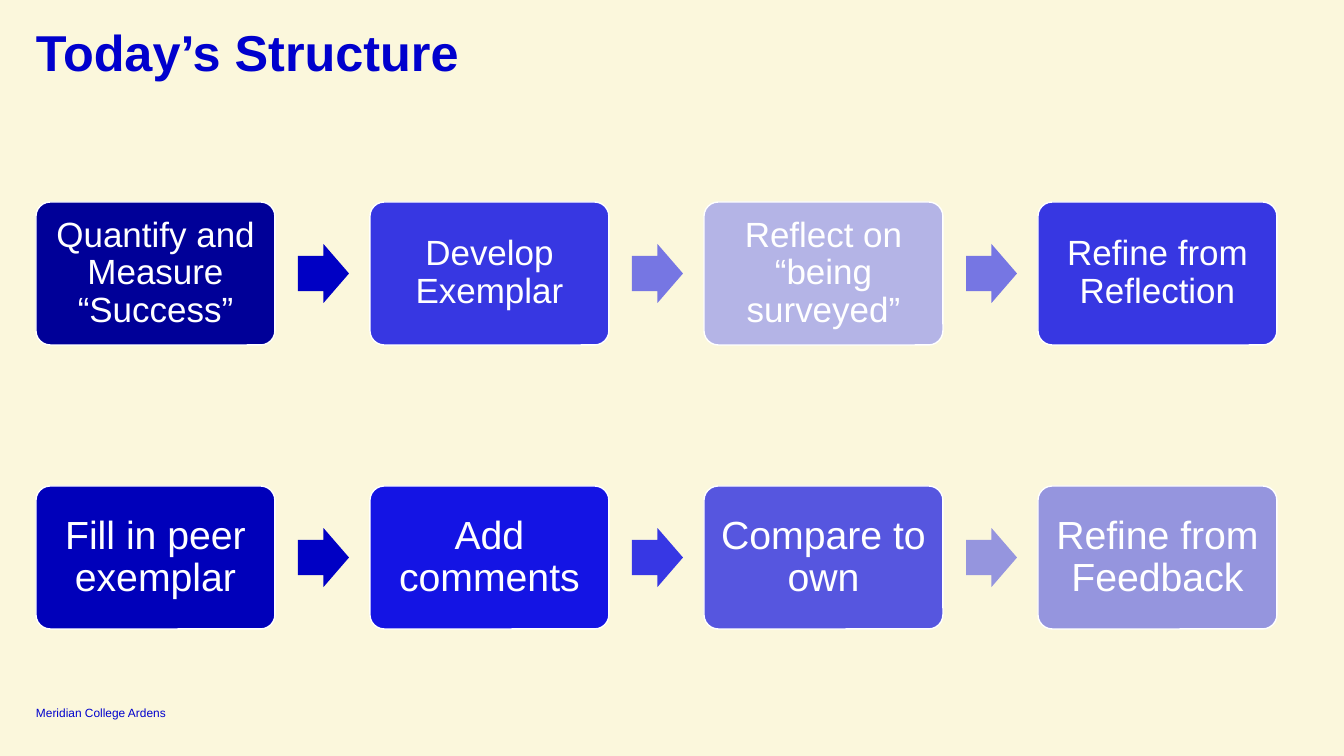
from dataclasses import dataclass

from pptx import Presentation
from pptx.dml.color import RGBColor
from pptx.enum.shapes import MSO_SHAPE
from pptx.enum.text import MSO_ANCHOR, MSO_AUTO_SIZE, PP_ALIGN
from pptx.shapes.autoshape import Shape
from pptx.shapes.group import GroupShape
from pptx.slide import Slide
from pptx.util import Emu, Pt

SLIDE_W, SLIDE_H = 1344, 756
EMU_PER_PX = 12192000 / SLIDE_W

LEFT, PITCH = 36, 334
BOX_W, BOX_H = 239, 143
ARROW_DX, ARROW_W, ARROW_H = 262, 51, 59

CREAM = RGBColor(0xFB, 0xF7, 0xDC)
WHITE = RGBColor(0xFF, 0xFF, 0xFF)
BLUE = RGBColor(0x00, 0x00, 0xCD)
NAVY = RGBColor(0x00, 0x00, 0x98)
DARK_BLUE = RGBColor(0x00, 0x00, 0xBA)
ARROW_BLUE = RGBColor(0x00, 0x00, 0xC4)
VIVID_BLUE = RGBColor(0x14, 0x14, 0xE4)
MID_BLUE = RGBColor(0x37, 0x37, 0xE2)
MID_ARROW_BLUE = RGBColor(0x37, 0x37, 0xE4)
SOFT_BLUE = RGBColor(0x56, 0x56, 0xDF)
LIGHT_BLUE = RGBColor(0x76, 0x76, 0xE3)
LAVENDER = RGBColor(0x95, 0x95, 0xDE)
PALE_LAVENDER = RGBColor(0xB4, 0xB4, 0xE6)


@dataclass(frozen=True)
class Step:
    text: str
    fill: RGBColor
    arrow: RGBColor | None = None


@dataclass(frozen=True)
class Process:
    top: int
    size: int
    margin: int
    steps: tuple[Step, ...]


PROCESSES = (
    Process(202, 25, 10, (
        Step("Quantify and Measure “Success”", NAVY, ARROW_BLUE),
        Step("Develop Exemplar", MID_BLUE, LIGHT_BLUE),
        Step("Reflect on “being surveyed”", PALE_LAVENDER, LIGHT_BLUE),
        Step("Refine from Reflection", MID_BLUE),
    )),
    Process(486, 28, 12, (
        Step("Fill in peer exemplar", DARK_BLUE, ARROW_BLUE),
        Step("Add comments", VIVID_BLUE, MID_ARROW_BLUE),
        Step("Compare to own", SOFT_BLUE, LAVENDER),
        Step("Refine from Feedback", LAVENDER),
    )),
)


def px(n: float) -> Emu:
    return Emu(round(n * EMU_PER_PX))


def write(shape: Shape, text: str, *, size: float, color: RGBColor,
          bold: bool = False, align: PP_ALIGN = PP_ALIGN.LEFT,
          anchor: MSO_ANCHOR = MSO_ANCHOR.TOP, margin: int = 0,
          spacing: float = 0.9) -> None:
    tf = shape.text_frame
    tf.auto_size = MSO_AUTO_SIZE.NONE
    tf.word_wrap = True
    tf.vertical_anchor = anchor
    tf.margin_left = tf.margin_right = px(margin)
    tf.margin_top = tf.margin_bottom = px(margin)
    p = tf.paragraphs[0]
    p.alignment = align
    p.line_spacing = spacing
    r = p.add_run()
    r.text = text
    r.font.name = "Arial"
    r.font.size = Pt(size)
    r.font.bold = bold
    r.font.color.rgb = color


def add_filled(group: GroupShape, kind: MSO_SHAPE, x: int, y: int, w: int,
               h: int, fill: RGBColor, adjustments: tuple[float, ...]) -> Shape:
    sp = group.shapes.add_shape(kind, px(x), px(y), px(w), px(h))
    sp.shadow.inherit = False
    sp.fill.solid()
    sp.fill.fore_color.rgb = fill
    sp.line.fill.background()
    for i, value in enumerate(adjustments):
        sp.adjustments[i] = value
    return sp


def add_process(s: Slide, process: Process) -> None:
    group = s.shapes.add_group_shape()
    arrow_top = process.top + (BOX_H - ARROW_H) // 2
    for i, step in enumerate(process.steps):
        x = LEFT + i * PITCH
        box = add_filled(group, MSO_SHAPE.ROUNDED_RECTANGLE, x, process.top,
                         BOX_W, BOX_H, step.fill, (0.1,))
        box.line.color.rgb = WHITE
        box.line.width = Pt(1)
        write(box, step.text, size=process.size, color=WHITE,
              align=PP_ALIGN.CENTER, anchor=MSO_ANCHOR.MIDDLE,
              margin=process.margin)
        if step.arrow is not None:
            add_filled(group, MSO_SHAPE.RIGHT_ARROW, x + ARROW_DX, arrow_top,
                       ARROW_W, ARROW_H, step.arrow, (0.6, 0.5))


def main() -> None:
    prs = Presentation()
    prs.slide_width, prs.slide_height = px(SLIDE_W), px(SLIDE_H)
    s = prs.slides.add_slide(prs.slide_layouts[5])
    s.background.fill.solid()
    s.background.fill.fore_color.rgb = CREAM

    title = s.shapes.title
    title.left, title.top = px(LEFT), px(28)
    title.width, title.height = px(1272), px(41)
    write(title, "Today’s Structure", size=36, color=BLUE, bold=True)

    footer = s.shapes.add_textbox(px(LEFT), px(705), px(156), px(15))
    write(footer, "Meridian College Ardens", size=8.5, color=BLUE,
          anchor=MSO_ANCHOR.BOTTOM, spacing=1.0)

    for process in PROCESSES:
        add_process(s, process)
    prs.save("out.pptx")


if __name__ == "__main__":
    main()
